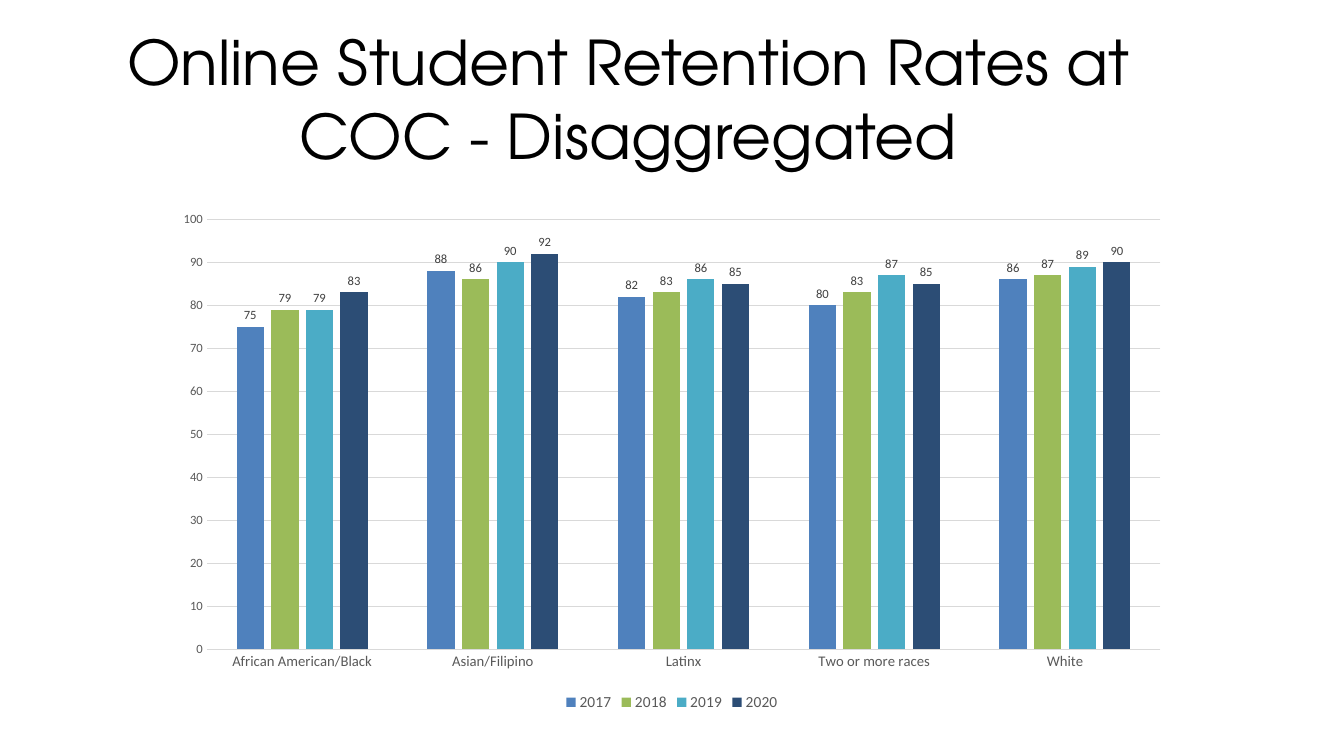
from pptx import Presentation
from pptx.chart.data import CategoryChartData
from pptx.dml.color import RGBColor
from pptx.enum.chart import XL_CHART_TYPE, XL_LABEL_POSITION, XL_LEGEND_POSITION, XL_TICK_MARK
from pptx.enum.text import MSO_ANCHOR, MSO_AUTO_SIZE, PP_ALIGN
from pptx.util import Inches, Pt

CLUSTERED = XL_CHART_TYPE.COLUMN_CLUSTERED
OUTSIDE_END = XL_LABEL_POSITION.OUTSIDE_END
BOTTOM = XL_LEGEND_POSITION.BOTTOM
NO_TICK = XL_TICK_MARK.NONE
MIDDLE = MSO_ANCHOR.MIDDLE
NO_AUTOFIT = MSO_AUTO_SIZE.NONE
CENTER = PP_ALIGN.CENTER

# Content
TITLE = "Online Student Retention Rates at COC - Disaggregated"
GROUPS = ["African American/Black", "Asian/Filipino", "Latinx", "Two or more races", "White"]
RATES_BY_YEAR = {
    "2017": [75, 88, 82, 80, 86],
    "2018": [79, 86, 83, 83, 87],
    "2019": [79, 90, 86, 87, 89],
    "2020": [83, 92, 85, 85, 90],
}

# Positions: left, top, width, height in inches
TITLE_BOX = (0.42, 0.23, 11.63, 1.48)
CHART_BOX = (1.62, 2, 10.09, 5.1)


class Theme:
    grid = RGBColor.from_string("D9D9D9")
    years = [RGBColor.from_string(code) for code in ("4F81BD", "9BBB59", "4BACC6", "2C4D75")]
    fonts = {
        "title": ("TeX Gyre Adventor", 44, "000000"),
        "chart": ("Calibri", 10, "000000"),
        "category": ("Calibri", 10.5, "595959"),
        "value": ("Calibri", 9, "595959"),
        "legend": ("Calibri", 11, "595959"),
        "label": ("Calibri", 9, "404040"),
    }


def set_values(target, values):
    for name, value in values.items():
        setattr(target, name, value)


def style_font(font, role):
    name, size, color = Theme.fonts[role]
    set_values(font, {"name": name, "size": Pt(size), "bold": False})
    font.color.rgb = RGBColor.from_string(color)


def style_line(line):
    line.color.rgb = Theme.grid
    line.width = Pt(0.75)


def add_title(slide):
    title = slide.shapes.title
    sides = ("left", "top", "width", "height")
    set_values(title, dict(zip(sides, map(Inches, TITLE_BOX))))
    frame = title.text_frame
    set_values(frame, {"text": TITLE, "word_wrap": True, "auto_size": NO_AUTOFIT,
                       "vertical_anchor": MIDDLE})
    paragraph = frame.paragraphs[0]
    paragraph.alignment = CENTER
    style_font(paragraph.runs[0].font, "title")


def add_rate_chart(slide):
    data = CategoryChartData(number_format="General")
    data.categories = GROUPS
    for year, rates in RATES_BY_YEAR.items():
        data.add_series(year, rates)
    chart = slide.shapes.add_chart(CLUSTERED, *map(Inches, CHART_BOX), data).chart
    set_values(chart, {"has_title": False, "has_legend": True})
    style_font(chart.font, "chart")

    # Legend
    set_values(chart.legend, {"position": BOTTOM, "include_in_layout": False})
    style_font(chart.legend.font, "legend")

    # Axes
    for axis, role in ((chart.category_axis, "category"), (chart.value_axis, "value")):
        set_values(axis, {"major_tick_mark": NO_TICK, "minor_tick_mark": NO_TICK})
        style_font(axis.tick_labels.font, role)
    style_line(chart.category_axis.format.line)
    value_axis = chart.value_axis
    set_values(value_axis, {"minimum_scale": 0, "maximum_scale": 100, "major_unit": 10,
                            "has_major_gridlines": True})
    value_axis.format.line.fill.background()
    style_line(value_axis.major_gridlines.format.line)

    # Columns and their labels
    plot = chart.plots[0]
    set_values(plot, {"gap_width": 219, "overlap": -27, "vary_by_categories": False})
    for series, color in zip(plot.series, Theme.years):
        series.format.fill.solid()
        series.format.fill.fore_color.rgb = color
        labels = series.data_labels
        set_values(labels, {"show_value": True, "position": OUTSIDE_END})
        style_font(labels.font, "label")


def main():
    presentation = Presentation()
    set_values(presentation, {"slide_width": Inches(13.33), "slide_height": Inches(7.5)})
    title_only = presentation.slide_layouts[5]
    slide = presentation.slides.add_slide(title_only)
    add_title(slide)
    add_rate_chart(slide)
    presentation.save("out.pptx")


if __name__ == "__main__":
    main()
